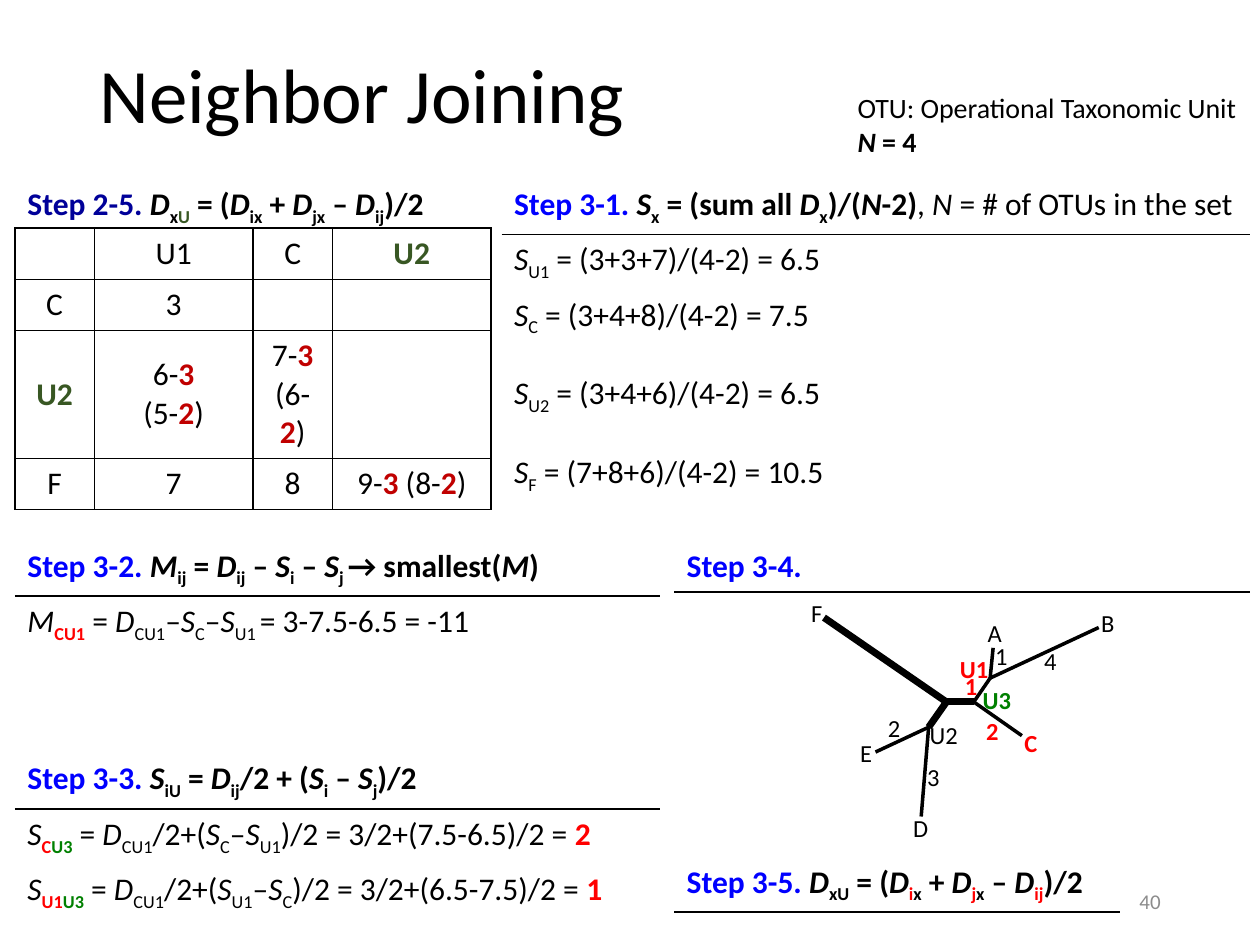
from dataclasses import dataclass, replace

from lxml import etree
from pptx import Presentation
from pptx.dml.color import RGBColor
from pptx.enum.shapes import MSO_CONNECTOR
from pptx.enum.text import MSO_ANCHOR, MSO_AUTO_SIZE, PP_ALIGN
from pptx.oxml.ns import qn
from pptx.util import Cm, Pt

BLACK = RGBColor(0x00, 0x00, 0x00)
BLUE = RGBColor(0x00, 0x00, 0xFF)
NAVY = RGBColor(0x00, 0x00, 0x99)
RED = RGBColor(0xFF, 0x00, 0x00)
DARK_RED = RGBColor(0xC0, 0x00, 0x00)
GREEN = RGBColor(0x00, 0x80, 0x00)
DARK_GREEN = RGBColor(0x38, 0x57, 0x23)
GRAY = RGBColor(0x8C, 0x8C, 0x8C)

ROW = 1.03
LEFT, RIGHT = 0.3, 13.59
STEP_TOP, MIDDLE_TOP = 3.61, 10.9

# Tree points in cm; the inner nodes carry the names of the joined units.
NODES = {
    "A": (20.02, 13.06), "B": (22.15, 12.65), "C": (20.6, 14.83),
    "D": (18.57, 16.46), "E": (17.65, 15.16), "F": (16.61, 12.45),
    "U1": (19.96, 13.67), "U2": (18.72, 14.66), "U3": (19.63, 14.15),
    "hub": (19.08, 14.15),
}
BRANCHES = [
    ("U1", "B", 2), ("U3", "C", 2), ("U2", "D", 2), ("U2", "E", 2),
    ("hub", "F", 4), ("U1", "A", 2), ("U3", "U1", 2), ("hub", "U3", 4),
    ("hub", "U2", 4),
]
TREE_LABELS = [
    ("1", 19.2, 13.41, RED), ("U1", 19.1, 13.06, RED),
    ("U3", 19.56, 13.69, GREEN), ("U2", 18.49, 14.4, BLACK),
    ("A", 19.66, 12.34, BLACK), ("B", 21.95, 12.14, BLACK),
    ("C", 20.4, 14.55, RED), ("D", 18.16, 16.26, BLACK),
    ("E", 17.09, 14.76, BLACK), ("F", 16.1, 11.94, BLACK),
    ("2", 17.65, 14.25, BLACK), ("3", 18.44, 15.24, BLACK),
    ("4", 20.8, 12.9, BLACK), ("1", 19.81, 12.8, BLACK),
    ("2", 19.63, 14.3, RED),
]


@dataclass
class Run:
    text: str
    color: RGBColor = BLACK
    bold: bool = False
    italic: bool = False
    subscript: bool = False


def strong(text, color):
    return Run(text, color, bold=True)


def var(letter, *subs):
    """Italic letter with subscripts, each a string or a bold coloured Run."""
    runs = [sub if isinstance(sub, Run) else Run(sub) for sub in subs]
    return [Run(letter, italic=True)] + [replace(r, subscript=True) for r in runs]


def line(*parts):
    """Flatten strings, runs and variables into one list of runs."""
    runs = []
    for part in parts:
        if isinstance(part, list):
            runs += part
        else:
            runs.append(part if isinstance(part, Run) else Run(part))
    return runs


def heading(step, *parts, color=BLUE):
    return [strong(f"Step {step}. ", color)] + [
        replace(run, bold=True) for run in line(*parts)]


def write(frame, lines, size, align=PP_ALIGN.LEFT):
    for index, runs in enumerate(lines):
        paragraph = frame.add_paragraph() if index else frame.paragraphs[0]
        paragraph.alignment = align
        for part in runs:
            run = paragraph.add_run()
            run.text = part.text
            font_format = {"name": "Calibri", "size": Pt(size),
                           "bold": part.bold, "italic": part.italic}
            for name, value in font_format.items():
                setattr(run.font, name, value)
            run.font.color.rgb = part.color
            if part.subscript:
                run._r.get_or_add_rPr().set("baseline", "-25000")


def add_label(shapes, box, lines, size, align=PP_ALIGN.LEFT, **frame_format):
    frame = shapes.add_textbox(*map(Cm, box)).text_frame
    defaults = {"word_wrap": False, "auto_size": MSO_AUTO_SIZE.SHAPE_TO_FIT_TEXT}
    for name, value in {**defaults, **frame_format}.items():
        setattr(frame, name, value)
    write(frame, lines, size, align)


def set_borders(cell, sides):
    """Draw a thin black line on the given sides (of LRTB) and none elsewhere."""
    properties = cell._tc.get_or_add_tcPr()
    for side in "LRTB":
        border = etree.SubElement(properties, qn(f"a:ln{side}"), w=str(Pt(1)))
        if side in sides:
            fill = etree.SubElement(border, qn("a:solidFill"))
            etree.SubElement(fill, qn("a:srgbClr"), val=str(BLACK))
        else:
            etree.SubElement(border, qn("a:noFill"))


def add_grid(slide, left, top, widths, heights, rows, borders, align=PP_ALIGN.LEFT):
    """Add a table; rows hold cells as lists of lines, borders the sides per row."""
    table = slide.shapes.add_table(
        len(heights), len(widths), Cm(left), Cm(top),
        Cm(sum(widths)), Cm(sum(heights))).table
    table.first_row = table.horz_banding = False
    for column, width in zip(table.columns, widths):
        column.width = Cm(width)
    for r, (height, sides) in enumerate(zip(heights, borders)):
        table.rows[r].height = Cm(height)
        for c in range(len(widths)):
            cell = table.cell(r, c)
            set_borders(cell, sides)
            cell.fill.background()
            cell.vertical_anchor = MSO_ANCHOR.MIDDLE
            if r < len(rows):
                write(cell.text_frame, rows[r][c], 18, align)


def add_step(slide, left, top, width, lines, heights=None, underlined=True):
    """One-column table with a heading and, mostly, a rule below it."""
    heights = heights or [ROW] * len(lines)
    borders = ["B" if underlined else "", "T"] + [""] * len(heights)
    add_grid(slide, left, top, [width], heights,
             [[[runs]] for runs in lines], borders)


def add_distances(slide):
    def reduced(total, cut):
        return line(f"{total}-", strong(str(cut), DARK_RED))

    def bracketed(total, cut):
        return line("(", reduced(total, cut), ")")

    u2 = [[strong("U2", DARK_GREEN)]]
    u1, c, f, three, seven, eight = ([line(text)] for text in
                                     ("U1", "C", "F", "3", "7", "8"))
    rows = [
        [[], u1, c, u2],
        [c, three, [], []],
        [u2, [reduced(6, 3), bracketed(5, 2)], [reduced(7, 3), bracketed(6, 2)], []],
        [f, seven, eight, [line(reduced(9, 3), " ", bracketed(8, 2))]],
    ]
    add_grid(slide, LEFT, 4.6, [1.6, 3.2, 1.6, 3.2], [ROW, ROW, 2 * ROW, ROW],
             rows, ["LRTB"] * 4, PP_ALIGN.CENTER)


def add_tree(slide):
    shapes = slide.shapes.add_group_shape().shapes
    for start, end, weight in BRANCHES:
        branch = shapes.add_connector(
            MSO_CONNECTOR.STRAIGHT, *map(Cm, NODES[start] + NODES[end]))
        branch.line.color.rgb = BLACK
        branch.line.width = Pt(weight)
        etree.SubElement(branch._element.spPr, qn("a:effectLst"))
    for text, left, top, color in TREE_LABELS:
        width = 1.09 if len(text) > 1 else 0.78
        add_label(shapes, (left, top, width, 0.86),
                  [[Run(text, color, bold=color != BLACK)]], 14)


def add_title(slide):
    title = slide.shapes.title
    box = {"left": 1.75, "top": 1.02, "width": 21.89, "height": 3.68}
    for name, value in box.items():
        setattr(title, name, Cm(value))
    title.text_frame.vertical_anchor = MSO_ANCHOR.TOP
    write(title.text_frame, [line("Neighbor Joining")], 44)
    title.text_frame.paragraphs[0].line_spacing = 0.9


def add_steps(slide):
    d_ij, s_i, s_j = var("D", "ij"), var("S", "i"), var("S", "j")
    d_cu1, s_c, s_u1 = var("D", "CU1"), var("S", "C"), var("S", "U1")
    red_c, red_u1, green_u3 = strong("C", RED), strong("U1", RED), strong("U3", GREEN)
    sums = [("U1", "3+3+7", "6.5"), ("C", "3+4+8", "7.5"),
            ("U2", "3+4+6", "6.5"), ("F", "7+8+6", "10.5")]

    add_step(slide, LEFT, STEP_TOP, 8.99, [heading(
        "2-5", var("D", "x", Run("U", DARK_GREEN)), " = (", var("D", "ix"), " + ",
        var("D", "jx"), " – ", d_ij, ")/2", color=NAVY)], underlined=False)
    add_step(slide, 10.11, STEP_TOP, 15.09, [
        heading("3-1", var("S", "x"), " = (sum all ", var("D", "x"), ")/(",
                var("N"), "-2)") + line(", ", var("N "), "= # of OTUs in the set"),
        *(line(var("S", unit), f" = ({terms})/(4-2) = {total}")
          for unit, terms, total in sums),
    ], [ROW, ROW, ROW, 2 * ROW, ROW])
    add_step(slide, LEFT, MIDDLE_TOP, 13, [
        heading("3-2", var("M", "ij"), " = ", d_ij, " – ", s_i, " – ",
                var("S", "j "), "→ smallest(", var("M"), ")"),
        line(var("M", strong("CU1", RED)), " = ", d_cu1, "–", s_c, "–",
             var("S", "U1 "), "= 3-7.5-6.5 = -11"),
    ], [ROW] * 4)
    add_step(slide, LEFT, 15.19, 13, [
        heading("3-3", var("S", "iU"), " = ", d_ij, "/2 + (", s_i, " – ", s_j, ")/2"),
        line(var("S", red_c, green_u3), " = ", d_cu1, "/2+(", s_c, "–", s_u1,
             ")/2 = 3/2+(7.5-6.5)/2 = ", strong("2", RED)),
        line(var("S", red_u1, green_u3), " = ", d_cu1, "/2+(", s_u1, "–", s_c,
             ")/2 = 3/2+(6.5-7.5)/2 = ", strong("1", RED)),
    ])
    add_step(slide, RIGHT, MIDDLE_TOP, 11.61, [[strong("Step 3-4.", BLUE)]],
             [ROW, 5 * ROW])
    add_step(slide, RIGHT, 17.27, 8.99, [heading(
        "3-5", var("D", "xU"), " = (", var("D", Run("i", RED), "x"), " + ",
        var("D", Run("j", RED), "x"), " – ", var("D", Run("ij", RED)), ")/2")])


def main():
    presentation = Presentation()
    presentation.slide_width, presentation.slide_height = Cm(25.4), Cm(19.05)
    slide = presentation.slides.add_slide(presentation.slide_layouts[5])
    add_title(slide)
    add_distances(slide)
    add_steps(slide)
    add_tree(slide)
    add_label(slide.shapes, (17.04, 1.7, 8.23, 1.63), [
        line("OTU: Operational Taxonomic Unit"),
        [Run("N", bold=True, italic=True), strong(" = 4", BLACK)]], 16)
    add_label(slide.shapes, (17.93, 17.65, 5.72, 1.02), [[Run("40", GRAY)]], 12,
              PP_ALIGN.RIGHT, word_wrap=True, auto_size=MSO_AUTO_SIZE.NONE,
              vertical_anchor=MSO_ANCHOR.MIDDLE)
    presentation.save("out.pptx")


if __name__ == "__main__":
    main()
